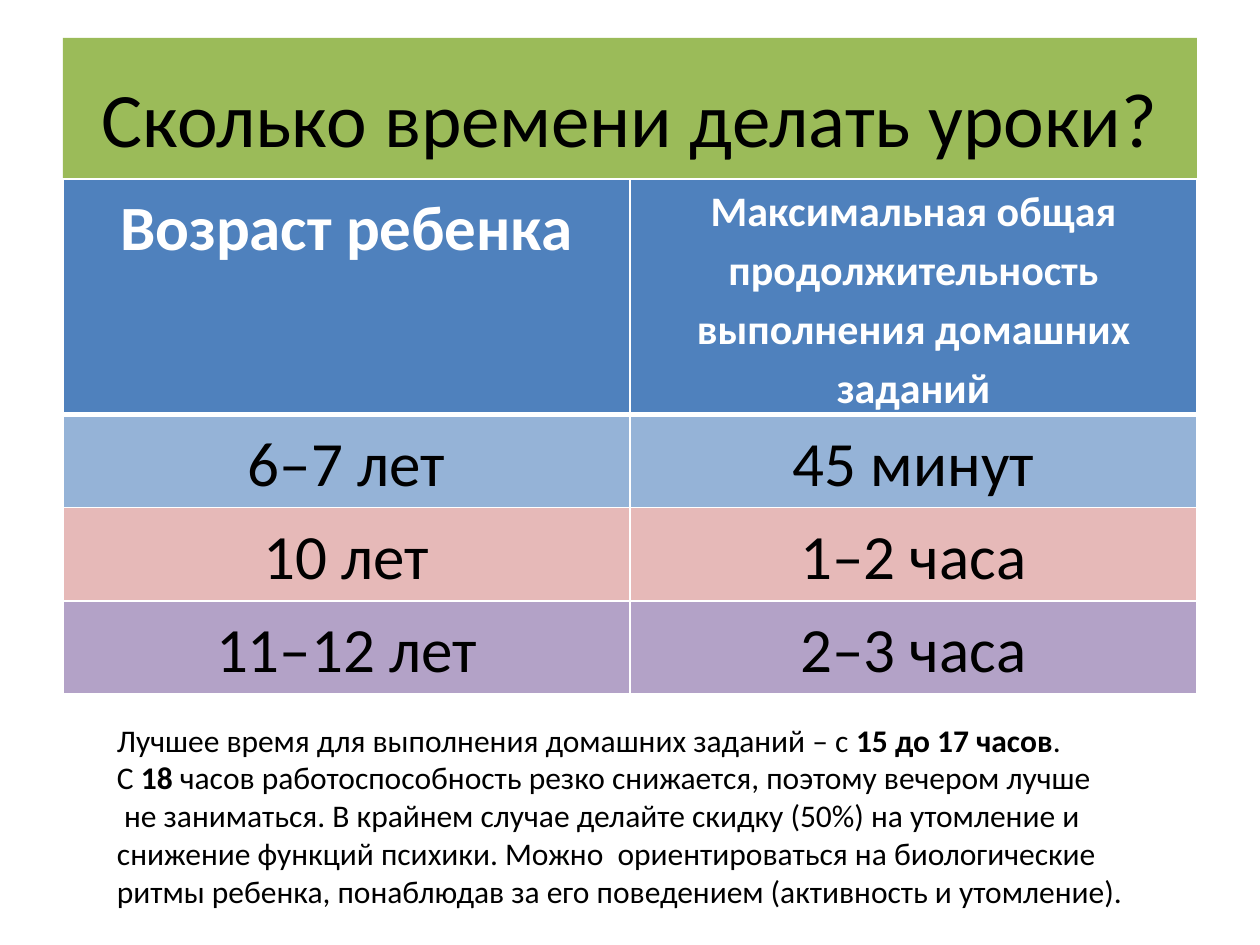
from lxml import etree
from pptx import Presentation
from pptx.dml.color import RGBColor
from pptx.enum.shapes import MSO_SHAPE
from pptx.enum.text import MSO_ANCHOR, MSO_AUTO_SIZE, PP_ALIGN
from pptx.oxml.ns import qn
from pptx.util import Inches, Pt

COLORS = {
    "title": "9BBB59",
    "header": "4F81BD",
    "blue": "95B3D7",
    "pink": "E6B9B8",
    "violet": "B3A2C7",
    "white": "FFFFFF",
    "black": "000000",
}


def add_run(paragraph, text, size, color="black", bold=False):
    run = paragraph.add_run()
    run.text = text
    run.font.name = "Calibri"
    run.font.size = Pt(size)
    run.font.bold = bold
    run.font.color.rgb = RGBColor.from_string(COLORS[color])


def set_borders(cell, widths):
    """Draw white borders; widths are points for left, right, top, bottom."""
    properties = cell._tc.get_or_add_tcPr()
    for index, (side, width) in enumerate(zip("LRTB", widths)):
        line = etree.Element(qn(f"a:ln{side}"), w=str(Pt(width)))
        fill = etree.SubElement(line, qn("a:solidFill"))
        etree.SubElement(fill, qn("a:srgbClr"), val=COLORS["white"])
        properties.insert(index, line)


presentation = Presentation()
presentation.slide_width = Inches(10)
presentation.slide_height = Inches(7.5)
slide = presentation.slides.add_slide(presentation.slide_layouts[6])

# Title band
title = slide.shapes.add_shape(
    MSO_SHAPE.RECTANGLE, Inches(0.5), Inches(0.3), Inches(9), Inches(1.25)
)
title.shadow.inherit = False
title.fill.solid()
title.fill.fore_color.rgb = RGBColor.from_string(COLORS["title"])
title.line.fill.background()
title.text_frame.word_wrap = True
title.text_frame.vertical_anchor = MSO_ANCHOR.MIDDLE
paragraph = title.text_frame.paragraphs[0]
paragraph.alignment = PP_ALIGN.CENTER
add_run(paragraph, "Сколько времени делать уроки?", 44)

# Homework time by age: fill, font colour, height, (text, size) per column
rows = [
    ("header", "white", 1.85, [
        ("Возраст ребенка", 36),
        ("Максимальная общая продолжительность выполнения домашних заданий", 24),
    ]),
    ("blue", "black", 0.74, [("6–7 лет", 36), ("45 минут", 36)]),
    ("pink", "black", 0.74, [("10 лет", 36), ("1–2 часа", 36)]),
    ("violet", "black", 0.74, [("11–12 лет", 36), ("2–3 часа", 36)]),
]
table = slide.shapes.add_table(
    len(rows), 2, Inches(0.5), Inches(1.42), Inches(9), Inches(4.07)
).table
for row_index, (fill, color, height, texts) in enumerate(rows):
    table.rows[row_index].height = Inches(height)
    top = 3 if row_index == 1 else 1
    bottom = 3 if row_index == 0 else 1
    for column_index, (text, size) in enumerate(texts):
        cell = table.cell(row_index, column_index)
        cell.fill.solid()
        cell.fill.fore_color.rgb = RGBColor.from_string(COLORS[fill])
        cell.margin_left = cell.margin_right = Inches(0.07)
        cell.margin_top = cell.margin_bottom = 0
        set_borders(cell, (1, 1, top, bottom))
        paragraph = cell.text_frame.paragraphs[0]
        paragraph.alignment = PP_ALIGN.CENTER
        paragraph.line_spacing = 1.15
        add_run(paragraph, text, size, color, bold=row_index == 0)

# Advice below the table: (text, bold) runs per paragraph
advice = [
    [
        ("Лучшее время для выполнения домашних заданий – с ", False),
        ("15 до 17 часов", True),
        (".", False),
    ],
    [
        ("С ", False),
        ("18", True),
        (" часов работоспособность резко снижается, поэтому вечером лучше", False),
    ],
    [
        (" не заниматься. В крайнем случае делайте скидку (50%) на утомление и "
         "снижение функций психики. Можно  ориентироваться на биологические", False),
    ],
    [("ритмы ребенка, понаблюдав за его поведением (активность и утомление).", False)],
]
advice_box = slide.shapes.add_textbox(
    Inches(0.83), Inches(5.67), Inches(8.42), Inches(1.62)
)
frame = advice_box.text_frame
frame.word_wrap = True
frame.auto_size = MSO_AUTO_SIZE.SHAPE_TO_FIT_TEXT
for index, runs in enumerate(advice):
    paragraph = frame.add_paragraph() if index else frame.paragraphs[0]
    for text, bold in runs:
        add_run(paragraph, text, 18, bold=bold)

presentation.save("out.pptx")
